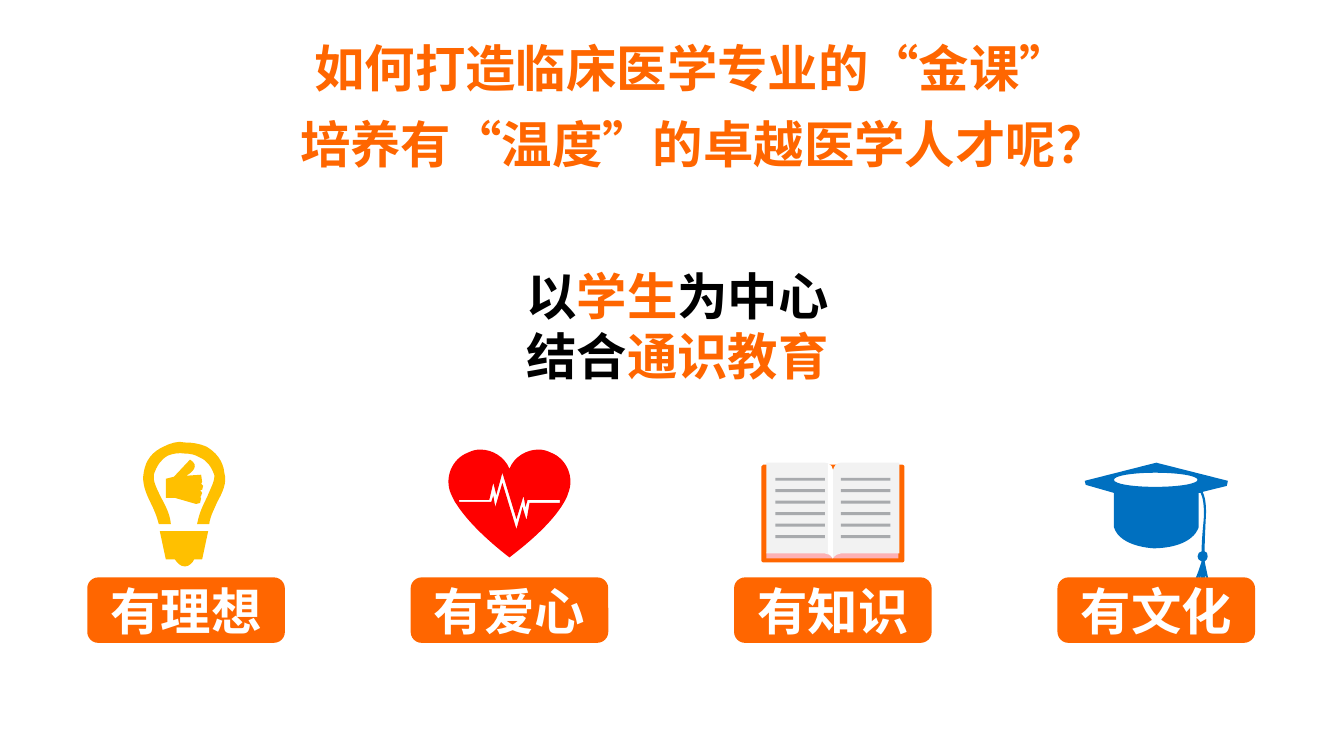
from pptx import Presentation
from pptx.dml.color import RGBColor
from pptx.enum.shapes import MSO_SHAPE
from pptx.enum.text import MSO_ANCHOR, PP_ALIGN
from pptx.oxml.ns import qn
from pptx.util import Cm, Pt
from lxml import etree

RECT, ROUND = MSO_SHAPE.RECTANGLE, MSO_SHAPE.ROUNDED_RECTANGLE
TOP, MIDDLE, CENTER = MSO_ANCHOR.TOP, MSO_ANCHOR.MIDDLE, PP_ALIGN.CENTER
FACE = "Noto Sans CJK SC"
FORMAT = {"name": FACE, "size": Pt(36), "bold": True}
ORANGE, BLACK, WHITE = "FF6600", "000000", "FFFFFF"
UNIT = Cm(2.54) / 100

CAP = [
    [(169, 40), (98, 22), (27, 40), (28, 44), (56, 52), (56, 86),
     (62, 106, 96, 107, 96, 107), (136, 106, 140, 86, 140, 86),
     (140, 52), (142, 52), (144, 56, 146, 64, 145, 79),
     (143, 100, 143, 106, 143, 110), (141, 110, 139, 112, 139, 115),
     (139, 117, 140, 119, 143, 120), (142, 123, 140, 130, 136, 139),
     (138, 139), (141, 132), (139, 139), (141, 140), (142, 134),
     (143, 140), (145, 140), (145, 134), (146, 140), (147, 140),
     (146, 133), (149, 139), (150, 139), (146, 120),
     (148, 119, 149, 117, 149, 115), (149, 112, 148, 110, 146, 110),
     (146, 106, 146, 101, 147, 79), (148, 67, 147, 57, 144, 51),
     (168, 45)],
    [(97, 46), (74, 46, 56, 43, 56, 39), (56, 35, 74, 32, 97, 32),
     (120, 32, 139, 35, 139, 39), (139, 43, 120, 46, 97, 46)],
]
HEART = [
    [(46, 64), (61, 87, 89, 109, 98, 116), (107, 109, 135, 88, 150, 65),
     (153, 60, 155, 57, 156, 53), (163, 37, 155, 18, 139, 12),
     (135, 10, 131, 9, 127, 9), (115, 9, 103, 16, 98, 28),
     (93, 16, 81, 9, 69, 9), (65, 9, 61, 10, 57, 12),
     (41, 18, 33, 37, 40, 53), (42, 57, 43, 60, 46, 64)],
    [(48, 61), (48, 59), (78, 59), (82, 42), (85, 54), (91, 32),
     (105, 78), (112, 55), (114, 66), (116, 59), (148, 59), (148, 62),
     (118, 62), (115, 79), (111, 66), (105, 88), (91, 42), (84, 66),
     (82, 55), (80, 61)],
]
BULB = [
    [(72, 90), (120, 90), (114, 118), (106, 118),
     (105, 121, 101, 125, 97, 125), (92, 125, 89, 121, 87, 118),
     (78, 118)],
    [(113, 34), (114, 41), (113, 43), (115, 45), (114, 49), (112, 49),
     (114, 52), (113, 55), (112, 56), (113, 57), (112, 62), (108, 63),
     (87, 57), (78, 57), (78, 38), (86, 36), (102, 19),
     (112, 25, 104, 32, 98, 35)],
    [(71, 83), (83, 83), (82, 72, 77, 64, 73, 56),
     (69, 48, 65, 40, 66, 34), (69, 25, 73, 19, 80, 15),
     (85, 13, 91, 12, 97, 13), (102, 13, 107, 14, 112, 17),
     (119, 20, 123, 26, 126, 34), (127, 40, 122, 48, 119, 56),
     (115, 64, 111, 72, 109, 83), (121, 83),
     (122, 75, 126, 68, 129, 61), (134, 52, 139, 42, 136, 32),
     (135, 20, 127, 11, 118, 6), (111, 3, 104, 2, 97, 2),
     (90, 0, 82, 3, 76, 6), (65, 11, 58, 19, 56, 32),
     (54, 42, 58, 52, 63, 62), (66, 68, 69, 75, 71, 83)],
]
COVER = [[(169, 119), (169, 120, 168, 121, 167, 121), (29, 121),
          (28, 121, 27, 120, 27, 119), (27, 26), (27, 25, 28, 24, 29, 24),
          (167, 24), (168, 24, 169, 25, 169, 26)]]
PAGE = [[(98, 117), (98, 30), (99, 25, 102, 22, 106, 22), (164, 22),
         (164, 112), (106, 112), (103, 112, 100, 114, 98, 117)]]
FLIP = [[tuple(196 - v if n % 2 == 0 else v for n, v in enumerate(step))
         for step in PAGE[0]]]
FOLD = [[(98, 29), (98, 26, 96, 24, 93, 23), (93, 112),
         (96, 113, 97, 115, 98, 117)]]


def tint(color):
    """Turn a hex string into a colour."""
    return RGBColor.from_string(color)


def paint(shape, color):
    """Give a shape a flat fill with no line or shadow."""
    shape.shadow.inherit = False
    shape.fill.solid()
    shape.fill.fore_color.rgb = tint(color)
    shape.line.fill.background()
    return shape


def block(slide, kind, box, color):
    """Draw a painted preset shape in a box."""
    return paint(slide.shapes.add_shape(kind, *map(round, box)), color)


def bend(shape, left, top, steps):
    """Turn the straight segments of six-number steps into curves."""
    nodes = [node for node in shape._element.find(".//" + qn("a:path"))
             if node.tag != qn("a:close")]
    for node, step in zip(nodes, steps):
        if len(step) == 6:
            node.tag = qn("a:cubicBezTo")
            for n in (0, 1):
                knot = etree.Element(qn("a:pt"))
                knot.set("x", str(round(left + UNIT * step[2 * n] - shape.left)))
                knot.set("y", str(round(top + UNIT * step[2 * n + 1] - shape.top)))
                node.insert(n, knot)


def outline(slide, left, top, loops, color):
    """Draw closed loops of points and curves as one shape."""
    pen = None
    for loop in loops:
        dots = [(left + UNIT * step[-2], top + UNIT * step[-1])
                for step in loop]
        if pen is None:
            pen = slide.shapes.build_freeform(*dots[0], scale=1.0)
        else:
            pen.move_to(*dots[0])
        pen.add_line_segments(dots[1:], close=True)
    shape = paint(pen.convert_to_shape(), color)
    bend(shape, left, top, sum(loops, []))


def write(frame, lines, anchor=TOP, spacing=None, hang=0):
    """Fill a text frame with centred lines of coloured runs."""
    frame.word_wrap = True
    frame.vertical_anchor = anchor
    for n, line in enumerate(lines):
        para = frame.paragraphs[0] if n == 0 else frame.add_paragraph()
        para.alignment = CENTER
        para.line_spacing = spacing
        if hang:
            props = para._p.get_or_add_pPr()
            props.set("marL", str(hang))
            props.set("indent", str(-hang))
        for text, color in line:
            for row, part in enumerate(text.split("\n")):
                if row:
                    para.add_line_break()
                run = para.add_run()
                run.text = part
                for key, value in FORMAT.items():
                    setattr(run.font, key, value)
                run.font.color.rgb = tint(color)
                etree.SubElement(run._r.rPr, qn("a:ea")).set("typeface", FACE)


def bulb(slide, left, top):
    """Draw the light bulb."""
    outline(slide, left, top, BULB, "FFC000")


def heart(slide, left, top):
    """Draw the heart with its pulse."""
    outline(slide, left, top, HEART, "FF0000")


def book(slide, left, top):
    """Draw the open book."""
    def bar(x, y, width, height, color):
        """Draw a bar inside the book."""
        box = left + x * UNIT, top + y * UNIT, width * UNIT, height * UNIT
        block(slide, RECT, box, color)

    outline(slide, left, top, COVER, ORANGE)
    bar(32, 111, 131, 6, "FDB1B4")
    for loops, color in ((PAGE, "F2F2F2"), (FLIP, "F2F2F2"), (FOLD, WHITE)):
        outline(slide, left, top, loops, color)
    for x in (106, 41):
        for row in range(6):
            bar(x, 37 + 11.4 * row, 49, 3, "A8AAAD")


def cap(slide, left, top):
    """Draw the graduation cap."""
    outline(slide, left, top, CAP, "0070C0")


def trait(slide, left, top, icon, text):
    """Place an icon over its label."""
    icon(slide, left, top)
    box = left, top + Cm(3.45), Cm(4.98), Cm(1.65)
    write(block(slide, ROUND, box, ORANGE).text_frame,
          [[(text, WHITE)]], MIDDLE)


def words(slide, box, lines, **style):
    """Place a text box."""
    write(slide.shapes.add_textbox(*box).text_frame, lines, **style)


def main():
    """Build the slide and save it."""
    deck = Presentation()
    deck.slide_width, deck.slide_height = Cm(33.87), Cm(19.05)
    slide = deck.slides.add_slide(deck.slide_layouts[6])
    words(slide, (Cm(2.98), Cm(0.43), Cm(28.93), Cm(3.56)),
          [[("如何打造临床医学专业的“金课”\n培养有“温度”的卓越医学人才呢？",
             ORANGE)]], spacing=1.25, hang=Cm(0.56))
    words(slide, (Cm(11.73), Cm(6.55), Cm(10.69), Cm(3.33)),
          [[("以", BLACK), ("学生", ORANGE), ("为中心", BLACK)],
           [("结合", BLACK), ("通识教育", ORANGE)]])
    traits = [(bulb, "有理想"), (heart, "有爱心"),
              (book, "有知识"), (cap, "有文化")]
    for n, (icon, text) in enumerate(traits):
        trait(slide, Cm(2.2 + 8.15 * n), Cm(11.1), icon, text)
    deck.save("out.pptx")


if __name__ == "__main__":
    main()
